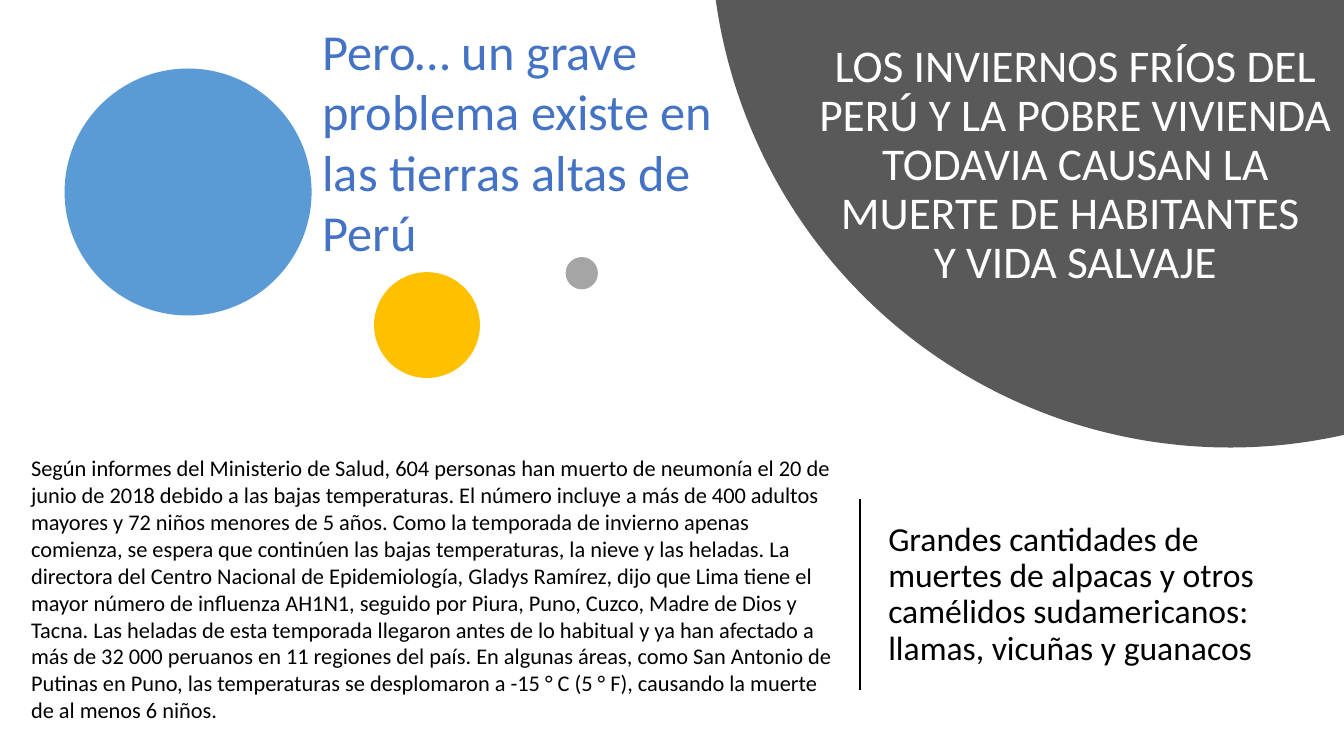
from copy import deepcopy
from dataclasses import dataclass
from math import acos, asin, cos, pi, sin

from lxml.etree import SubElement
from pptx import Presentation
from pptx.dml.color import RGBColor
from pptx.enum.shapes import MSO_CONNECTOR as Connector, MSO_SHAPE as Preset
from pptx.enum.text import MSO_ANCHOR as Anchor, MSO_AUTO_SIZE as AutoSize, PP_ALIGN as Align
from pptx.oxml.ns import qn
from pptx.util import Pt

PX = 9144  # EMU in a px, 100 px to the inch
WIDTH, HEIGHT = 1333, 750
FONT = "Calibri"
COLORS = {
    "black": "000000", "white": "FFFFFF", "heading": "4472C4", "dome": "595959",
    "blue": "5B9BD5", "gold": "FFC000", "gray": "A5A5A5",
}

TITLE = ("LOS INVIERNOS FRÍOS DEL PERÚ Y LA POBRE VIVIENDA TODAVIA CAUSAN LA "
         "MUERTE DE HABITANTES \vY VIDA SALVAJE")
SUBTITLE = ("Grandes cantidades de muertes de alpacas y otros camélidos sudamericanos: "
            "llamas, vicuñas y guanacos")
HEADING = "Pero… un grave problema existe en las tierras altas de Perú"
REPORT = (
    "Según informes del Ministerio de Salud, 604 personas han muerto de neumonía el 20 de "
    "junio de 2018 debido a las bajas temperaturas. El número incluye a más de 400 adultos "
    "mayores y 72 niños menores de 5 años. Como la temporada de invierno apenas comienza, se "
    "espera que continúen las bajas temperaturas, la nieve y las heladas. La directora del "
    "Centro Nacional de Epidemiología, Gladys Ramírez, dijo que Lima tiene el mayor número de "
    "influenza AH1N1, seguido por Piura, Puno, Cuzco, Madre de Dios y Tacna. Las heladas de "
    "esta temporada llegaron antes de lo habitual y ya han afectado a más de 32 000 peruanos "
    "en 11 regiones del país. En algunas áreas, como San Antonio de Putinas en Puno, las "
    "temperaturas se desplomaron a -15 ° C (5 ° F), causando la muerte de al menos 6 niños."
)


@dataclass
class Circle:
    left: int
    top: int
    size: int
    color: str


CIRCLES = [
    Circle(64, 68, 245, "blue"),
    Circle(371, 270, 105, "gold"),
    Circle(561, 255, 32, "gray"),
]


def rgb(name: str) -> RGBColor:
    return RGBColor.from_string(COLORS[name])


def place(box, left: int, top: int, width: int, height: int) -> None:
    box.left, box.top, box.width, box.height = (n * PX for n in (left, top, width, height))


def write(box, text: str, *, size: float, color: str = "black", align=Align.LEFT,
          anchor=Anchor.TOP, line_spacing: float = 1.0, space_before: int = 0,
          auto_size=AutoSize.NONE) -> None:
    frame = box.text_frame
    frame.word_wrap = True
    frame.auto_size = auto_size
    frame.vertical_anchor = anchor
    para = frame.paragraphs[0]
    para.text = text
    para.alignment = align
    para.line_spacing = line_spacing
    para.space_before = Pt(space_before)
    for span in para.runs:
        span.font.name = FONT
        span.font.size = Pt(size)
        span.font.color.rgb = rgb(color)
    for line_break in para._p.findall(qn("a:br")):
        line_break.append(deepcopy(para.runs[0].font._element))


def paint(shape, color: str) -> None:
    shape.shadow.inherit = False
    shape.fill.solid()
    shape.fill.fore_color.rgb = rgb(color)
    shape.line.fill.background()


def add_circle(page, circle: Circle) -> None:
    size = circle.size * PX
    shape = page.shapes.add_shape(Preset.OVAL, circle.left * PX, circle.top * PX, size, size)
    paint(shape, circle.color)


def add_dome(page, center_x: int, center_y: int, radius: int, steps: int = 120) -> None:
    """Draw the part of a large circle that lies within the page's top right corner."""
    first = acos((WIDTH - center_x) / radius)
    last = pi - asin(-center_y / radius)
    angles = [first + (last - first) * step / steps for step in range(steps + 1)]
    arc = [((center_x + radius * cos(angle)) * PX, (center_y + radius * sin(angle)) * PX)
           for angle in angles]
    builder = page.shapes.build_freeform(WIDTH * PX, 0)
    builder.add_line_segments(arc, close=True)
    paint(builder.convert_to_shape(), "dome")


def add_divider(page, x: int, top: int, bottom: int) -> None:
    line = page.shapes.add_connector(Connector.STRAIGHT, x * PX, top * PX, x * PX, bottom * PX)
    line.line.color.rgb = rgb("black")
    line.line.width = Pt(1.5)
    SubElement(line._element.spPr, qn("a:effectLst"))


def add_text(page, left: int, top: int, width: int, height: int, text: str, **style) -> None:
    box = page.shapes.add_textbox(0, 0, 0, 0)
    place(box, left, top, width, height)
    write(box, text, auto_size=AutoSize.SHAPE_TO_FIT_TEXT, **style)


def main() -> None:
    deck = Presentation()
    deck.slide_width, deck.slide_height = WIDTH * PX, HEIGHT * PX
    page = deck.slides.add_slide(deck.slide_layouts[0])
    title, subtitle = page.placeholders

    place(subtitle, 871, 402, 392, 376)
    write(subtitle, SUBTITLE, size=24, anchor=Anchor.MIDDLE, line_spacing=0.9, space_before=10)
    for circle in CIRCLES:
        add_circle(page, circle)
    add_dome(page, 1220, -71, 515)
    add_divider(page, 853, 495, 685)
    add_text(page, 21, 446, 814, 279, REPORT, size=16)

    page.shapes._spTree.append(title._element)  # in front of the dome
    place(title, 792, 30, 549, 261)
    write(title, TITLE, size=32.4, color="white", align=Align.CENTER, anchor=Anchor.BOTTOM,
          line_spacing=0.9)
    add_text(page, 310, 15, 423, 252, HEADING, size=36, color="heading")
    deck.save("out.pptx")


if __name__ == "__main__":
    main()
